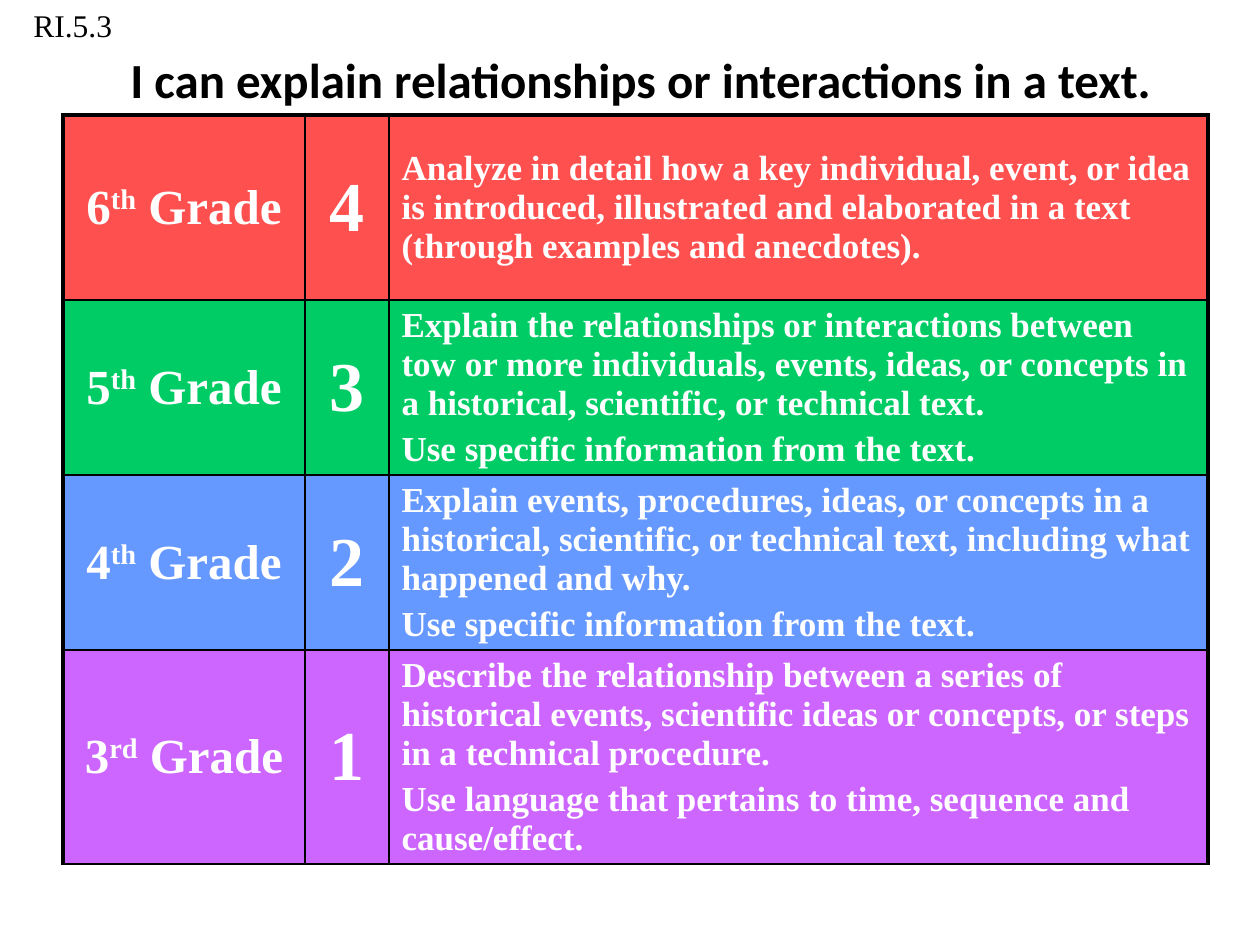
import dataclasses
import pptx
import pptx.util
import pptx.dml.color
import pptx.enum.text
import lxml.etree

PX = 914400 / 126
ALIGN = pptx.enum.text.PP_ALIGN
ANCHOR = pptx.enum.text.MSO_ANCHOR
NS = "http://schemas.openxmlformats.org/drawingml/2006/main"


@dataclasses.dataclass(frozen=True)
class Theme:
    head: str = "Calibri"
    body: str = "Times New Roman"
    ink: str = "000000"
    paper: str = "FFFFFF"
    bands: tuple = ("FF5050", "00CC66", "6699FF", "CC66FF")
    title: int = 28
    grade: int = 28
    score: int = 40
    goal: int = 20
    code: int = 18
    thin: float = 1
    mid: float = 1.5
    thick: float = 2.25


def px(n):
    return pptx.util.Emu(round(n * PX))


def rgb(hue):
    return pptx.dml.color.RGBColor.from_string(hue)


def write(frame, text, *, size, font, color, bold=False, align=ALIGN.LEFT, gap=0):
    """Fill a frame: one paragraph a line, with ^ around superscripts."""
    for i, line in enumerate(text.split("\n")):
        para = frame.add_paragraph() if i else frame.paragraphs[0]
        para.alignment = align
        para.space_before = pptx.util.Pt(gap if i else 0)
        for j, part in enumerate(line.split("^")):
            run = para.add_run()
            run.text = part
            run.font.size = pptx.util.Pt(size)
            run.font.name = font
            run.font.bold = bold
            run.font.color.rgb = rgb(color)
            if j % 2:
                run.font._element.set("baseline", "30000")


def edge(cell, side, width, color):
    """Draw one border of a cell; side is L, R, T or B, in that order."""
    line = lxml.etree.SubElement(cell._tc.get_or_add_tcPr(), f"{{{NS}}}ln{side}",
                                 w=str(pptx.util.Pt(width)))
    fill = lxml.etree.SubElement(line, f"{{{NS}}}solidFill")
    lxml.etree.SubElement(fill, f"{{{NS}}}srgbClr", val=color)


class Page:
    def __init__(self, deck, theme):
        self.theme = theme
        self.slide = deck.slides.add_slide(deck.slide_layouts[5])

    def title(self, text, x, y, w, h):
        box = self.slide.shapes.title
        box.left, box.top, box.width, box.height = map(px, (x, y, w, h))
        frame = box.text_frame
        frame.auto_size = pptx.enum.text.MSO_AUTO_SIZE.NONE
        frame.vertical_anchor = ANCHOR.MIDDLE
        write(frame, text, size=self.theme.title, font=self.theme.head,
              color=self.theme.ink, bold=True, align=ALIGN.CENTER)

    def label(self, text, x, y, w, h):
        frame = self.slide.shapes.add_textbox(*map(px, (x, y, w, h))).text_frame
        frame.word_wrap = True
        write(frame, text, size=self.theme.code, font=self.theme.body,
              color=self.theme.ink)

    def table(self, data, x, y, cols, rows):
        grid = self.slide.shapes.add_table(
            len(rows), len(cols), *map(px, (x, y, sum(cols), sum(rows)))).table
        grid.first_row = grid.horz_banding = False
        for col, w in zip(grid.columns, cols):
            col.width = px(w)
        for row, h in zip(grid.rows, rows):
            row.height = px(h)
        for r, line in enumerate(data):
            for c, text in enumerate(line):
                self.cell(grid.cell(r, c), text, r, c)

    def cell(self, cell, text, r, c):
        look = self.theme
        for side, width in zip("LRTB", (self.wall(r, c), self.wall(r, c + 1),
                                        self.rule(r, c), self.rule(r + 1, c))):
            edge(cell, side, width, look.ink)
        cell.fill.solid()
        cell.fill.fore_color.rgb = rgb(look.bands[r])
        cell.vertical_anchor = ANCHOR.MIDDLE
        size = (look.grade, look.score, look.goal)[c]
        write(cell.text_frame, text, size=size, font=look.body, color=look.paper,
              bold=True, align=ALIGN.LEFT if c == 2 else ALIGN.CENTER,
              gap=size * 0.2)

    def wall(self, r, c):
        """Width of the upright line left of column c."""
        if c in (0, 3):
            return self.theme.thick
        return self.theme.mid if r == 2 else self.theme.thin

    def rule(self, r, c):
        """Width of the level line above row r."""
        if r == 0:
            return self.theme.thick
        return self.theme.thin if r in (2, 3) and c < 2 else self.theme.mid


GOALS = [
    ("6^th^ Grade", "4",
     "Analyze in detail how a key individual, event, or idea is introduced, "
     "illustrated and elaborated in a text (through examples and anecdotes)."),
    ("5^th^ Grade", "3",
     "Explain the relationships or interactions between tow or more individuals, "
     "events, ideas, or concepts in a historical, scientific, or technical text.\n"
     "Use specific information from the text."),
    ("4^th^ Grade", "2",
     "Explain events, procedures, ideas, or concepts in a historical, scientific, "
     "or technical text, including what happened and why.\n"
     "Use specific information from the text."),
    ("3^rd^ Grade", "1",
     "Describe the relationship between a series of historical events, scientific "
     "ideas or concepts, or steps in a technical procedure.\n"
     "Use language that pertains to time, sequence and cause/effect."),
]


def main():
    deck = pptx.Presentation()
    deck.slide_width, deck.slide_height = px(1260), px(945)
    page = Page(deck, Theme())
    page.title("I can explain relationships or interactions in a text.",
               100, 16, 1081, 126)
    page.table(GOALS, 63, 115, cols=(242, 84, 819), rows=(185, 175, 175, 214))
    page.label("RI.5.3", 21, 0, 179, 50)
    deck.save("out.pptx")


if __name__ == "__main__":
    main()
